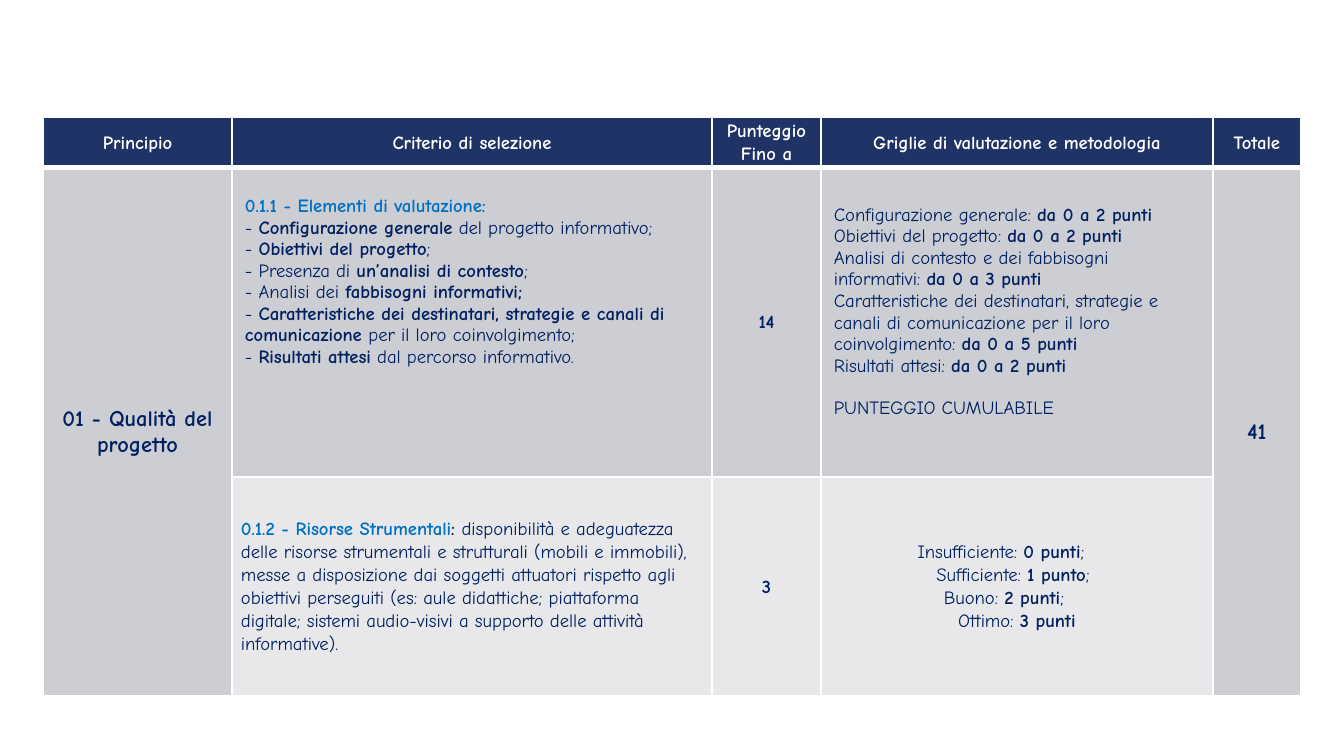
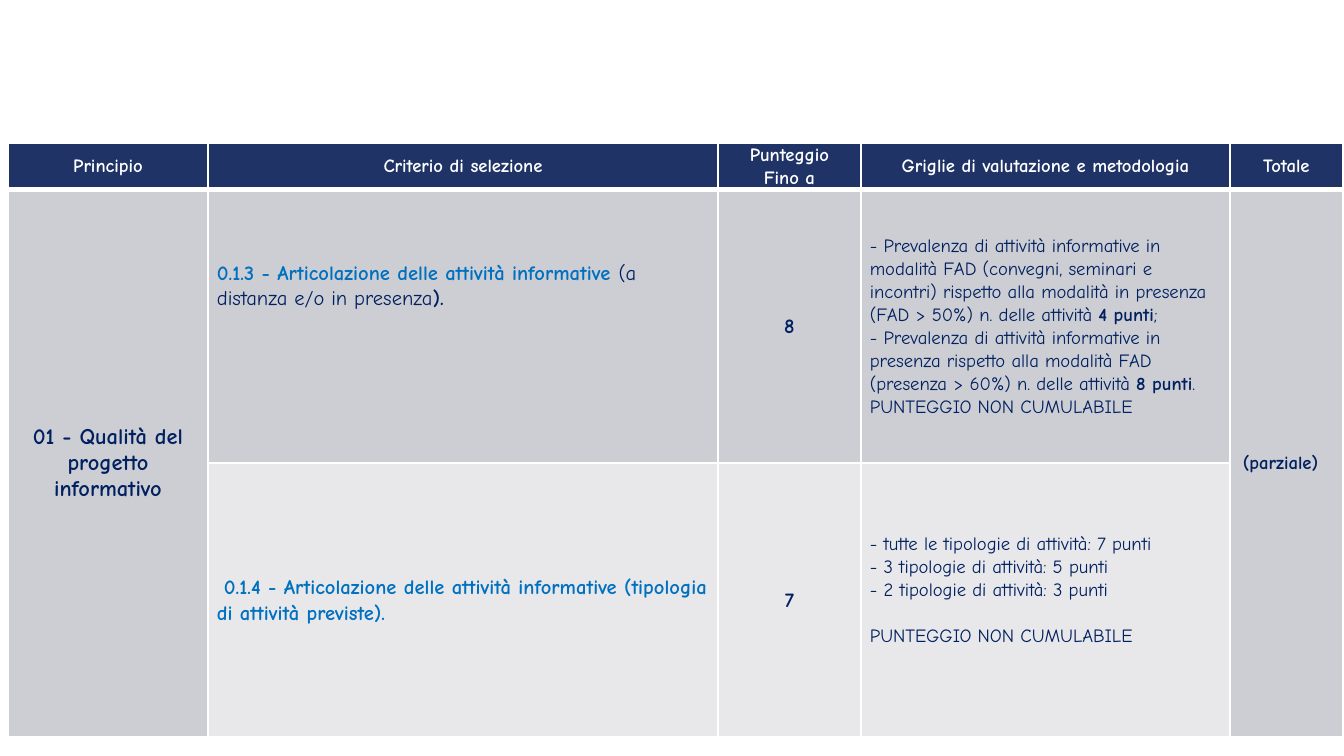
import pptx
import pptx.dml.color
import pptx.enum.text
import pptx.oxml
import pptx.oxml.ns
import pptx.util

SCALE = 914400 / 134.4
FONT = "Comic Neue"
COLORS = {"paper": "FEFFFE", "header": "1F3366", "dark": "CDCED3",
          "light": "E8E8EA", "navy": "002060", "blue": "0070C0"}
ALIGN = pptx.enum.text.PP_ALIGN
ANCHOR = pptx.enum.text.MSO_ANCHOR
HEADERS = ["Principio", "Criterio di selezione", "Punteggio\nFino a",
           "Griglie di valutazione e metodologia", "Totale"]
ROOMY = (13, 7, 13, 7)
TIGHT = (9, 0, 9, 0)


def px(n):
    return pptx.util.Emu(round(n * SCALE))


def rgb(name):
    return pptx.dml.color.RGBColor.from_string(COLORS[name])


def add_runs(p, text, size, color):
    """Text before | is bold blue; text between asterisks is bold."""
    heading, bar, rest = text.rpartition("|")
    parts = [(heading, True, "blue")]
    parts += [(t, i % 2 == 1, color) for i, t in enumerate(rest.split("*"))]
    for part, bold, tint in parts:
        if part:
            r = p.add_run()
            r.text = part
            r.font.name = FONT
            r.font.size = pptx.util.Pt(size)
            r.font.bold = bold
            r.font.color.rgb = rgb(tint)


def set_borders(cell, top=1, bottom=1):
    tcPr = cell._tc.get_or_add_tcPr()
    for side, width in (("L", 1), ("R", 1), ("T", top), ("B", bottom)):
        tcPr.append(pptx.oxml.parse_xml(
            f'<a:ln{side} {pptx.oxml.ns.nsdecls("a")} w="{pptx.util.Pt(width)}">'
            f'<a:solidFill><a:srgbClr val="{COLORS["paper"]}"/></a:solidFill>'
            f'</a:ln{side}>'))


def fill_cell(cell, text, size=10, color="navy", align=ALIGN.LEFT,
              anchor=ANCHOR.MIDDLE, margins=TIGHT, spacing=1.07,
              lefts=(), first_indent=0, last_gap=0):
    """Write one paragraph per line; lefts are their left indents."""
    (cell.margin_left, cell.margin_top,
     cell.margin_right, cell.margin_bottom) = map(px, margins)
    cell.vertical_anchor = anchor
    tf = cell.text_frame
    lines = text.split("\n")
    for i, line in enumerate(lines):
        p = tf.add_paragraph() if i else tf.paragraphs[0]
        p.alignment = align
        p.line_spacing = spacing
        pPr = p._p.get_or_add_pPr()
        pPr.set("marL", str(px(lefts[i] if lefts else 0)))
        pPr.set("indent", str(px(first_indent)))
        if last_gap and i == len(lines) - 1:
            p.space_before = px(last_gap)
        add_runs(p, line, size, color)


def add_score_table(slide, left, top, widths, heights, body):
    """body maps (row, column) to the text and format of a cell."""
    table = slide.shapes.add_table(
        len(heights), len(widths), px(left), px(top),
        px(sum(widths)), px(sum(heights))).table
    for column, width in zip(table.columns, widths):
        column.width = px(width)
    for row, height in zip(table.rows, heights):
        row.height = px(height)
    for i, fill in enumerate(("header", "dark", "light")):
        for j in range(len(widths)):
            cell = table.cell(i, j)
            set_borders(cell, top=3 if i == 1 else 1, bottom=1 if i else 3)
            cell.fill.solid()
            merged = i == 2 and j in (0, len(widths) - 1)
            cell.fill.fore_color.rgb = rgb("dark" if merged else fill)
    for j in (0, len(widths) - 1):
        table.cell(1, j).merge(table.cell(2, j))
    for j, title in enumerate(HEADERS):
        bold = "\n".join(f"*{line}*" for line in title.split("\n"))
        fill_cell(table.cell(0, j), bold, color="paper", align=ALIGN.CENTER)
    for (i, j), (text, style) in body.items():
        fill_cell(table.cell(i, j), text, **style)


def add_slide(prs):
    slide = prs.slides.add_slide(prs.slide_layouts[6])
    slide.background.fill.solid()
    slide.background.fill.fore_color.rgb = rgb("paper")
    return slide


def main():
    prs = pptx.Presentation()
    prs.slide_width, prs.slide_height = px(1344), px(756)
    centered = {"align": ALIGN.CENTER}
    roomy = {"margins": ROOMY, "spacing": 1.0}
    big = {**centered, **roomy, "size": 12}

    add_score_table(add_slide(prs), 43, 117, [189, 480, 109, 392, 88], [51, 309, 219], {
        (1, 0): ("*01 - Qualità del progetto*", big),
        (1, 1): ("0.1.1 - Elementi di valutazione:|\n"
                 "- *Configurazione generale* del progetto informativo;\n"
                 "- *Obiettivi del progetto*;\n"
                 "- Presenza di *un’analisi di contesto*;\n"
                 "- Analisi dei *fabbisogni informativi;*\n"
                 "- *Caratteristiche dei destinatari, strategie e canali di "
                 "comunicazione *per il loro coinvolgimento;\n"
                 "- *Risultati attesi* dal percorso informativo.",
                 {"anchor": ANCHOR.TOP, "margins": (13, 28, 13, 7), "spacing": 1.0}),
        (1, 2): ("*14*", {**centered, **roomy}),
        (1, 3): ("Configurazione generale: *da 0 a 2 punti*\n"
                 "Obiettivi del progetto: *da 0 a 2 punti*\n"
                 "Analisi di contesto e dei fabbisogni informativi: *da 0 a 3 punti*\n"
                 "Caratteristiche dei destinatari, strategie e canali di comunicazione "
                 "per il loro coinvolgimento: *da 0 a 5 punti*\n"
                 "Risultati attesi: *da 0 a 2 punti*\n"
                 "PUNTEGGIO CUMULABILE",
                 {"margins": (13, 7, 13, 28), "spacing": 1.0, "last_gap": 21}),
        (1, 4): ("*41*", big),
        (2, 1): ("0.1.2 - Risorse Strumentali|*: *disponibilità e adeguatezza delle "
                 "risorse strumentali e strutturali (mobili e immobili), messe a "
                 "disposizione dai soggetti attuatori rispetto agli obiettivi "
                 "perseguiti (es: aule didattiche; piattaforma digitale; sistemi "
                 "audio-visivi a supporto delle attività informative).", {}),
        (2, 2): ("*3*", centered),
        (2, 3): ("Insufficiente: *0 punti*;\nSufficiente: *1 punto*;\n"
                 "Buono: *2 punti*;\nOttimo: *3 punti*",
                 {**centered, "margins": (9, 0, 41, 0), "lefts": (0, 24, 6, 32)}),
    })

    add_score_table(add_slide(prs), 8, 143, [200, 510, 143, 369, 113], [46, 274, 274], {
        (1, 0): ("*01 - Qualità del progetto informativo*", big),
        (1, 1): ("0.1.3 - Articolazione delle attività informative |"
                 "(a distanza e/o in presenza*).*",
                 {"size": 11, "anchor": ANCHOR.BOTTOM, "margins": (9, 0, 9, 152)}),
        (1, 2): ("*8*", {**centered, "size": 11}),
        (1, 3): ("- Prevalenza di attività informative in modalità FAD (convegni, "
                 "seminari e incontri) rispetto alla modalità in presenza "
                 "(FAD > 50%) n. delle attività *4 punti*;\n"
                 "- Prevalenza di attività informative in presenza rispetto alla "
                 "modalità FAD (presenza > 60%) n. delle attività *8 punti*.\n"
                 "PUNTEGGIO NON CUMULABILE", {}),
        (1, 4): ("*(parziale)*", roomy),
        (2, 1): ("0.1.4 - Articolazione delle attività informative "
                 "(tipologia di attività previste).|",
                 {"size": 11, "first_indent": 7}),
        (2, 2): ("*7*", {**centered, "size": 11}),
        (2, 3): ("- tutte le tipologie di attività: 7 punti\n"
                 "- 3 tipologie di attività: 5 punti\n"
                 "- 2 tipologie di attività: 3 punti\n"
                 "PUNTEGGIO NON CUMULABILE",
                 {"align": ALIGN.JUSTIFY, "anchor": ANCHOR.TOP,
                  "margins": (9, 69, 9, 0), "last_gap": 23}),
    })
    prs.save("out.pptx")


if __name__ == "__main__":
    main()
